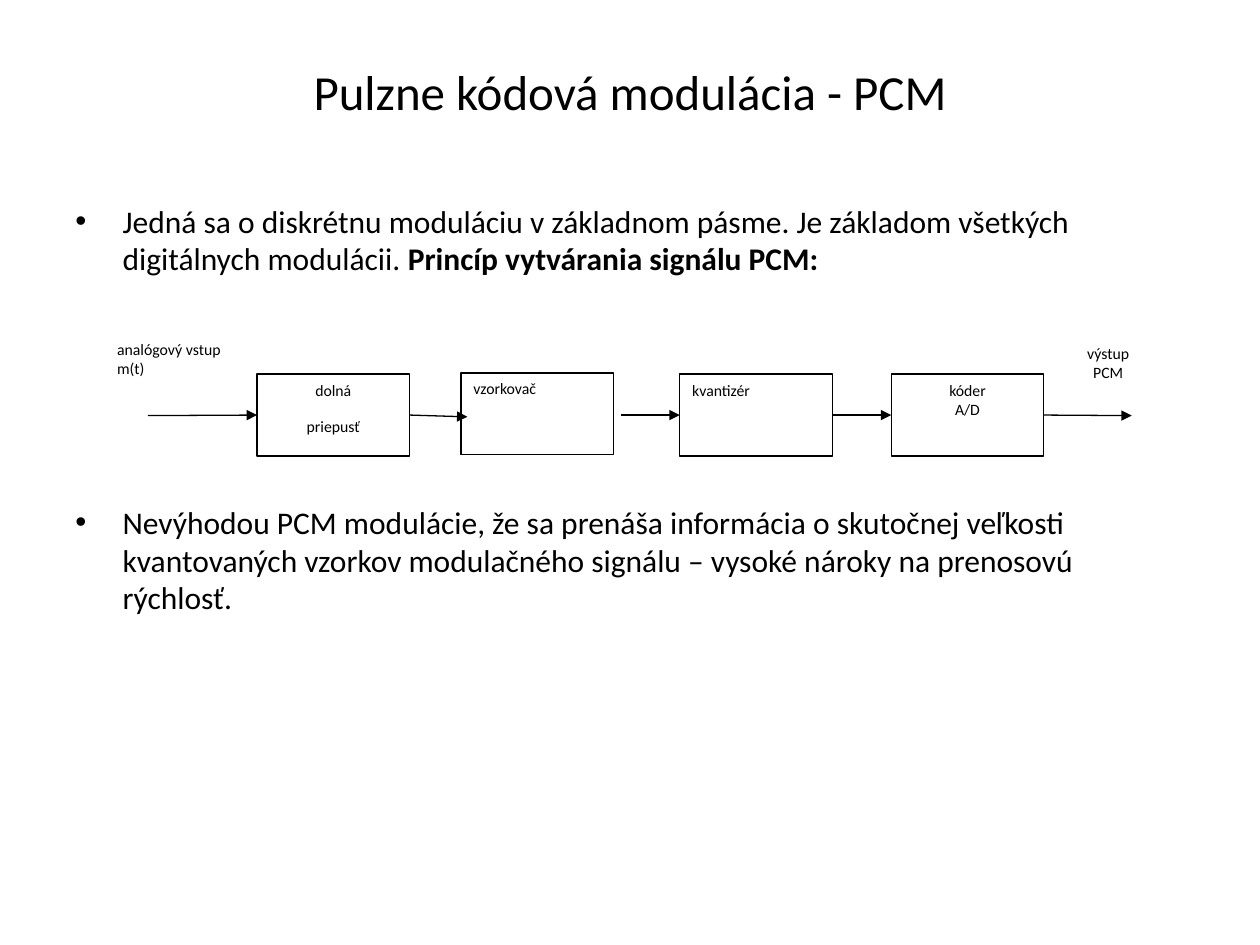
import dataclasses
import typing

import pptx
import pptx.dml.color
import pptx.enum.shapes
import pptx.enum.text
import pptx.oxml
import pptx.oxml.ns
import pptx.util

Pt = pptx.util.Pt
ALIGN = pptx.enum.text.PP_ALIGN
ANCHOR = pptx.enum.text.MSO_ANCHOR
BLACK = pptx.dml.color.RGBColor(0, 0, 0)
WHITE = pptx.dml.color.RGBColor(255, 255, 255)
FONT = "Calibri"
LEFT, RIGHT = 1, 3  # connection sites of a rectangle


@dataclasses.dataclass
class Box:
    text: str
    x: float
    y: float
    w: float = 87.2
    h: float = 46.8
    align: ALIGN = ALIGN.CENTER
    edge: bool = True


@dataclasses.dataclass
class Arrow:
    start: tuple[float, float]
    end: tuple[float, float]
    source: typing.Optional[int] = None  # index of the stage it leaves
    target: typing.Optional[int] = None  # index of the stage it enters


STAGES = [
    Box("dolná\npriepusť", 146.9, 213.8),
    Box("vzorkovač", 263.5, 213.1, align=ALIGN.LEFT),
    Box("kvantizér", 388.5, 213.8, align=ALIGN.LEFT),
    Box("kóder\vA/D", 509.3, 213.8),
]
LABELS = [
    Box("analógový vstup m(t)", 59.8, 190.8, 85, 41.8, ALIGN.LEFT, False),
    Box("výstup\vPCM", 600.5, 193, 65.5, 38.2, edge=False),
]
ARROWS = [
    Arrow((84.5, 237.5), (146.9, 237.5), target=0),
    Arrow((234.5, 237.5), (267.1, 238.2), source=0),
    Arrow((475.5, 237), (509, 237.5), source=2, target=3),
    Arrow((354.8, 237.2), (388.5, 237.2), target=2),
    Arrow((596.5, 237.5), (646.7, 237.5), source=3),
]
POINTS = [
    [("Jedná sa o diskrétnu moduláciu v základnom pásme. "
      "Je základom všetkých digitálnych modulácii. ", False),
     ("Princíp vytvárania signálu PCM:", True)],
    [("Nevýhodou PCM modulácie, že sa prenáša informácia o skutočnej "
      "veľkosti kvantovaných vzorkov modulačného signálu – vysoké nároky "
      "na prenosovú rýchlosť.", False)],
]


def style(run, size: float, bold: bool = False) -> None:
    font = run.font
    font.name, font.size, font.bold = FONT, Pt(size), bold
    font.color.rgb = BLACK


def add_xml(parent, tag: str, **attrs: str):
    node = pptx.oxml.parse_xml(f"<{tag} {pptx.oxml.ns.nsdecls('a')}/>")
    for key, val in attrs.items():
        node.set(key, val)
    parent.append(node)


def draw_title(slide) -> None:
    title = slide.shapes.title
    title.left, title.top, title.width, title.height = map(
        Pt, (36, 21.6, 648, 61.2))
    frame = title.text_frame
    frame.text = "Pulzne kódová modulácia - PCM"
    frame.vertical_anchor = ANCHOR.MIDDLE
    frame.paragraphs[0].alignment = ALIGN.CENTER
    style(frame.paragraphs[0].runs[0], 28)


def draw_points(slide) -> None:
    shape = slide.shapes.add_textbox(*map(Pt, (36, 111.6, 648, 370.8)))
    frame = shape.text_frame
    frame.word_wrap = True
    for i, parts in enumerate(POINTS):
        para = frame.add_paragraph() if i else frame.paragraphs[0]
        para.space_before = Pt(129 if i else 0)  # room for the diagram
        props = para._p.get_or_add_pPr()
        props.set("marL", str(Pt(27)))
        props.set("indent", str(-Pt(27)))
        add_xml(props, "a:buFont", typeface="Arial")
        add_xml(props, "a:buChar", char="•")
        for text, bold in parts:
            run = para.add_run()
            run.text = text
            style(run, 18, bold)


def draw_box(slide, box: Box):
    shape = slide.shapes.add_shape(
        pptx.enum.shapes.MSO_SHAPE.RECTANGLE,
        *map(Pt, (box.x, box.y, box.w, box.h)))
    shape.shadow.inherit = False
    shape.fill.solid()
    shape.fill.fore_color.rgb = WHITE
    if box.edge:
        shape.line.color.rgb = BLACK
        shape.line.width = Pt(0.75)
    else:
        shape.line.fill.background()
    frame = shape.text_frame
    frame.text = box.text
    frame.word_wrap = True
    frame.vertical_anchor = ANCHOR.TOP
    for para in frame.paragraphs:
        para.alignment = box.align
        para.space_after = Pt(10)
        for run in para.runs:
            style(run, 9)
    return shape


def draw_arrow(slide, arrow: Arrow, stages: list) -> None:
    line = slide.shapes.add_connector(
        pptx.enum.shapes.MSO_CONNECTOR.STRAIGHT,
        *map(Pt, arrow.start + arrow.end))
    if arrow.source is not None:
        line.begin_connect(stages[arrow.source], RIGHT)
    if arrow.target is not None:
        line.end_connect(stages[arrow.target], LEFT)
    line.line.color.rgb = BLACK
    line.line.width = Pt(0.75)
    add_xml(line.line._get_or_add_ln(), "a:tailEnd", type="triangle")
    add_xml(line._element.spPr, "a:effectLst")


def main() -> None:
    deck = pptx.Presentation()
    deck.slide_width, deck.slide_height = Pt(720), Pt(540)
    slide = deck.slides.add_slide(deck.slide_layouts[5])

    # Title and bullet points
    draw_title(slide)
    draw_points(slide)

    # Signal chain
    stages = [draw_box(slide, box) for box in STAGES]
    for arrow in ARROWS:
        draw_arrow(slide, arrow, stages)
    for label in LABELS:
        draw_box(slide, label)

    deck.save("out.pptx")


if __name__ == "__main__":
    main()
